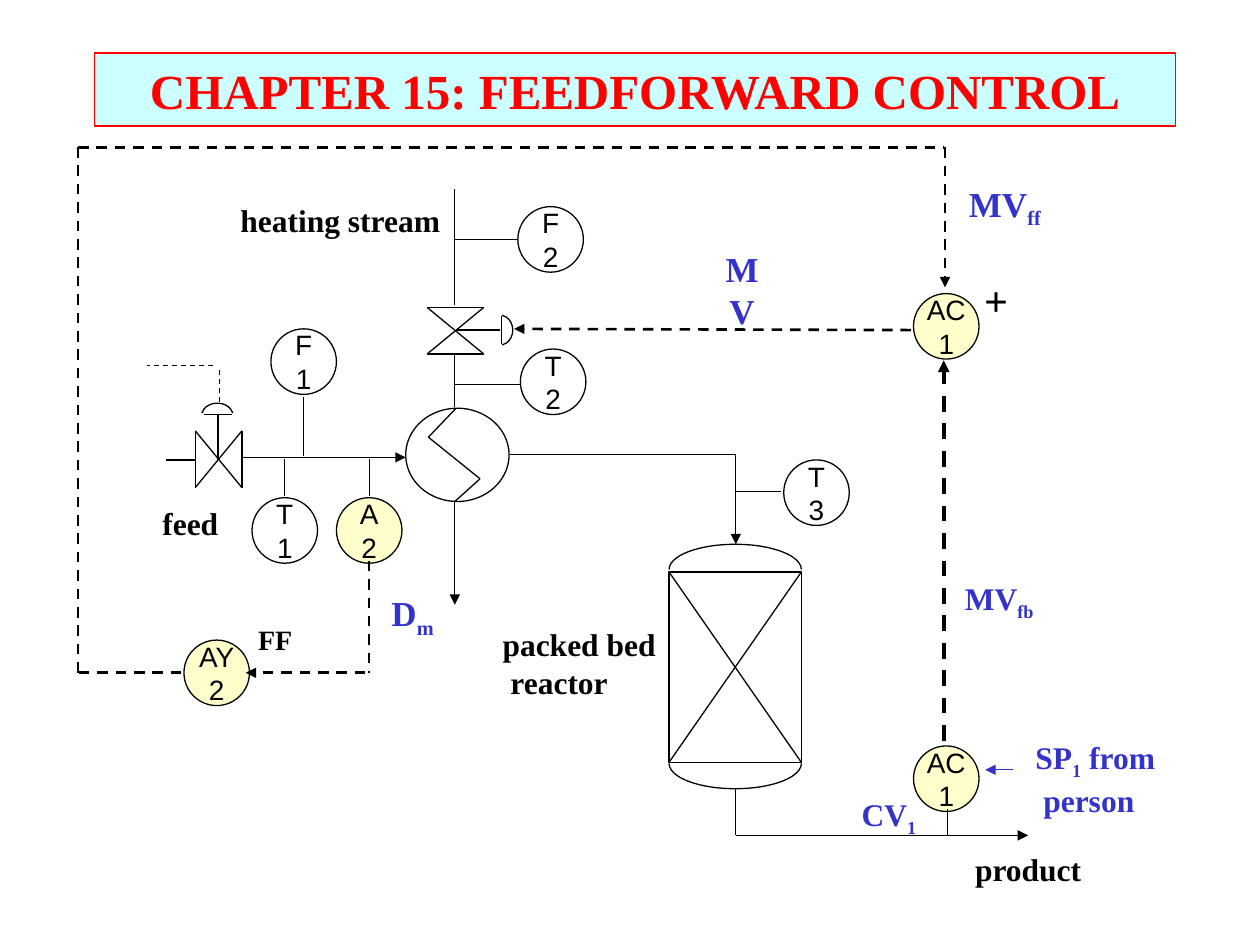
from dataclasses import dataclass

from lxml.etree import SubElement
from pptx import Presentation
from pptx.dml.color import RGBColor
from pptx.enum.dml import MSO_LINE
from pptx.enum.shapes import MSO_CONNECTOR, MSO_SHAPE
from pptx.enum.text import MSO_ANCHOR, PP_ALIGN
from pptx.oxml.ns import qn
from pptx.slide import Slide
from pptx.util import Emu, Pt

PX = 9144  # 100 px to the inch
COLORS = {"black": "000000", "blue": "3333CC", "red": "FF0000",
          "cyan": "CCFFFF", "yellow": "FFFFCC"}
SERIF, SANS = "Times New Roman", "Arial"
INSTRUMENT_SIZE = 52


@dataclass
class Line:
    x1: int
    y1: int
    x2: int
    y2: int
    arrow: bool = False
    dashed: bool = False
    width: float = 0.75
    color: str = "black"


@dataclass
class Instrument:
    left: int
    top: int
    letters: str
    number: str
    fill: str = ""


@dataclass
class Label:
    """Each row holds spans; every second span is a subscript."""
    left: int
    top: int
    width: int
    height: int
    rows: tuple[tuple[str, ...], ...]
    size: int = 18
    color: str = "black"
    centred: bool = False


@dataclass
class Arc:
    left: int
    top: int
    width: int
    height: int
    start: int
    end: int


PIPES = [
    Line(361, 150, 361, 242), Line(361, 281, 361, 323),
    Line(361, 398, 361, 480, arrow=True),
    Line(132, 365, 155, 365), Line(192, 363, 322, 363, arrow=True),
    Line(405, 361, 584, 361), Line(584, 361, 584, 432, arrow=True),
    Line(584, 626, 584, 663), Line(584, 663, 816, 663, arrow=True),
]
HEATING_COIL = [Line(362, 324, 340, 347), Line(340, 347, 381, 380),
                Line(381, 380, 361, 398)]
VALVES = [
    Line(384, 244, 339, 244), Line(384, 281, 339, 281),
    Line(362, 262, 397, 262), Line(398, 251, 398, 273),
    Line(155, 342, 155, 387), Line(192, 342, 192, 387),
    Line(173, 365, 173, 329), Line(162, 329, 184, 329),
]
TAPS = [
    Line(411, 190, 361, 190), Line(413, 305, 361, 305),
    Line(620, 390, 584, 390), Line(752, 642, 752, 663),
    Line(241, 315, 241, 362), Line(226, 394, 226, 364),
    Line(293, 394, 293, 364),
]
SIGNALS = [
    Line(174, 319, 174, 291, dashed=True),
    Line(169, 290, 117, 290, dashed=True),
    Line(749, 588, 749, 286, arrow=True, dashed=True, width=2.25),
    Line(723, 262, 408, 261, arrow=True, dashed=True, width=1.5),
    Line(804, 611, 782, 611, arrow=True, color="blue"),
    Line(293, 445, 293, 534, dashed=True, width=1.5),
    Line(290, 534, 195, 534, arrow=True, dashed=True, width=1.5),
    Line(144, 534, 62, 534, dashed=True, width=1.5),
    Line(62, 534, 62, 117, dashed=True, width=1.5),
    Line(62, 117, 749, 117, dashed=True, width=1.5),
    Line(750, 117, 750, 228, arrow=True, dashed=True, width=1.5),
]
INSTRUMENTS = [
    Instrument(725, 592, "AC", "1", "yellow"),
    Instrument(725, 233, "AC", "1", "yellow"),
    Instrument(146, 508, "AY", "2", "yellow"),
    Instrument(267, 395, "A", "2", "yellow"),
    Instrument(200, 395, "T", "1"), Instrument(413, 277, "T", "2"),
    Instrument(622, 365, "T", "3"),
    Instrument(215, 261, "F", "1"), Instrument(411, 164, "F", "2"),
]
ARCS = [
    Arc(531, 432, 105, 40, 180, 0), Arc(531, 586, 105, 40, 0, 180),
    Arc(386, 250, 21, 24, 280, 80), Arc(160, 320, 25, 20, 190, 350),
]
LABELS = [
    Label(119, 395, 65, 40, (("feed",),)),
    Label(764, 670, 105, 40, (("product",),)),
    Label(181, 155, 179, 40, (("heating stream",),)),
    Label(389, 491, 142, 70, (("packed bed",), (" reactor",))),
    Label(812, 581, 117, 70, (("SP", "1", " from"), (" person",)), color="blue"),
    Label(756, 455, 77, 40, (("MV", "fb"),), color="blue"),
    Label(674, 626, 71, 40, (("CV", "1"),), color="blue"),
    Label(771, 213, 39, 50, (("+",),), size=24, centred=True),
    Label(758, 142, 79, 43, (("MV", "ff"),), 20, "blue", True),
    Label(556, 208, 66, 43, (("MV",),), 20, "blue", True),
    Label(195, 489, 47, 37, (("FF",),), size=16, centred=True),
    Label(300, 467, 55, 43, (("D", "m"),), 20, "blue", True),
]


def px(*lengths: int) -> list[Emu]:
    return [Emu(length * PX) for length in lengths]


def rgb(name: str) -> RGBColor:
    return RGBColor.from_string(COLORS[name])


def set_font(para, name: str, size: int, color: str, bold: bool = False) -> None:
    para.font.name, para.font.size, para.font.bold = name, Pt(size), bold
    para.font.color.rgb = rgb(color)


def draw_line(page: Slide, line: Line) -> None:
    connector = page.shapes.add_connector(
        MSO_CONNECTOR.STRAIGHT, *px(line.x1, line.y1, line.x2, line.y2))
    connector.line.color.rgb = rgb(line.color)
    connector.line.width = Pt(line.width)
    if line.dashed:
        connector.line.dash_style = MSO_LINE.DASH
    properties = connector._element.spPr
    if line.arrow:
        SubElement(properties.find(qn("a:ln")), qn("a:tailEnd"), type="triangle")
    SubElement(properties, qn("a:effectLst"))


def draw_diagonals(page: Slide, left: int, top: int, right: int, bottom: int) -> None:
    draw_line(page, Line(left, top, right, bottom))
    draw_line(page, Line(right, top, left, bottom))


def draw_outline(page: Slide, kind: MSO_SHAPE, *place: int, fill: str = ""):
    shape = page.shapes.add_shape(kind, *px(*place))
    shape.shadow.inherit = False
    shape.line.color.rgb, shape.line.width = rgb("black"), Pt(0.75)
    if fill:
        shape.fill.solid()
        shape.fill.fore_color.rgb = rgb(fill)
    else:
        shape.fill.background()
    return shape


def draw_arc(page: Slide, arc: Arc) -> None:
    shape = draw_outline(page, MSO_SHAPE.ARC, arc.left, arc.top, arc.width, arc.height)
    for index, degrees in enumerate((arc.start, arc.end)):
        shape.adjustments[index] = degrees * 0.6  # 60000ths of a degree over 100000


def draw_instrument(page: Slide, item: Instrument) -> None:
    circle = draw_outline(page, MSO_SHAPE.OVAL, item.left, item.top,
                          INSTRUMENT_SIZE, INSTRUMENT_SIZE, fill=item.fill)
    frame = circle.text_frame
    frame.word_wrap = False
    frame.vertical_anchor = MSO_ANCHOR.MIDDLE
    frame.text = f"{item.letters}\n{item.number}"
    for para in frame.paragraphs:
        para.alignment = PP_ALIGN.CENTER
        set_font(para, SANS, 16, "black")


def draw_label(page: Slide, label: Label) -> None:
    box = page.shapes.add_textbox(*px(label.left, label.top, label.width, label.height))
    frame = box.text_frame
    frame.word_wrap = False
    if label.centred:
        frame.vertical_anchor = MSO_ANCHOR.MIDDLE
    for row_index, row in enumerate(label.rows):
        para = frame.add_paragraph() if row_index else frame.paragraphs[0]
        para.alignment = PP_ALIGN.CENTER if label.centred else PP_ALIGN.LEFT
        set_font(para, SERIF, label.size, label.color, bold=True)
        for span_index, text in enumerate(row):
            span = para.add_run()
            span.text = text
            if span_index % 2:
                span.font._element.set("baseline", "-25000")


def draw_title(page: Slide, text: str) -> None:
    title = page.shapes.title
    title.left, title.top, title.width, title.height = px(75, 42, 858, 58)
    title.fill.solid()
    title.fill.fore_color.rgb = rgb("cyan")
    title.line.color.rgb, title.line.width = rgb("red"), Pt(0.75)
    title.text_frame.text = text
    title.text_frame.vertical_anchor = MSO_ANCHOR.MIDDLE
    para = title.text_frame.paragraphs[0]
    para.alignment = PP_ALIGN.CENTER
    set_font(para, SERIF, 28, "red", bold=True)


def main() -> None:
    deck = Presentation()
    deck.slide_width, deck.slide_height = px(1000, 750)
    page = deck.slides.add_slide(deck.slide_layouts[5])
    draw_title(page, "CHAPTER 15: FEEDFORWARD CONTROL")
    draw_outline(page, MSO_SHAPE.RECTANGLE, 531, 454, 105, 151)
    draw_outline(page, MSO_SHAPE.OVAL, 322, 324, 82, 74)
    for corners in ((531, 454, 636, 605), (339, 244, 384, 281), (155, 342, 192, 387)):
        draw_diagonals(page, *corners)
    for arc in ARCS:
        draw_arc(page, arc)
    for item in INSTRUMENTS:
        draw_instrument(page, item)
    for line in PIPES + HEATING_COIL + VALVES + TAPS + SIGNALS:
        draw_line(page, line)
    for label in LABELS:
        draw_label(page, label)
    deck.save("out.pptx")


if __name__ == "__main__":
    main()
